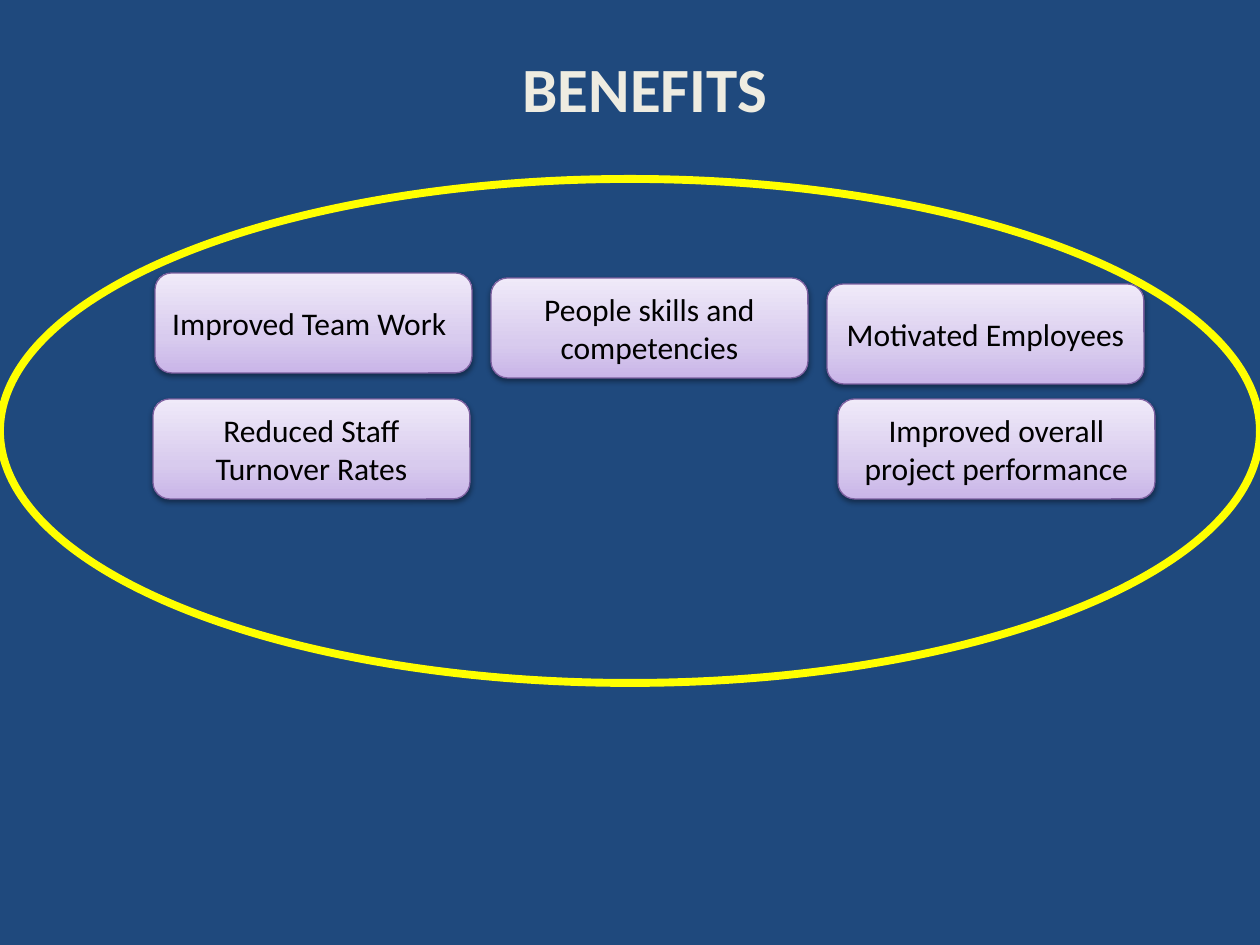
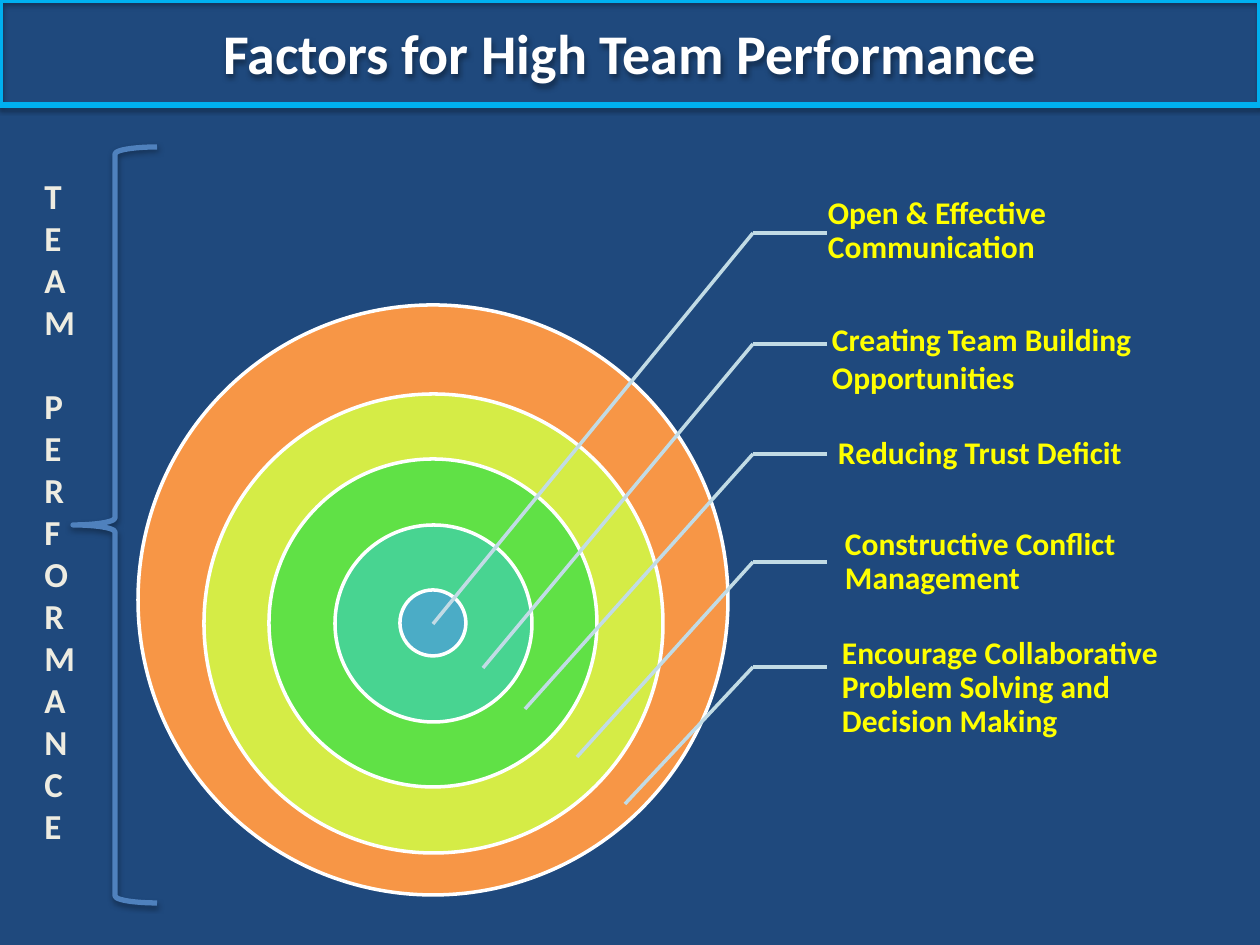
from copy import deepcopy
from dataclasses import dataclass

from lxml import etree
from pptx import Presentation
from pptx.dml.color import RGBColor
from pptx.enum.shapes import MSO_CONNECTOR, MSO_SHAPE
from pptx.enum.text import MSO_ANCHOR, MSO_AUTO_SIZE, PP_ALIGN
from pptx.oxml.ns import qn
from pptx.util import Emu, Pt

LEFT, CENTER = PP_ALIGN.LEFT, PP_ALIGN.CENTER
TOP, MIDDLE = MSO_ANCHOR.TOP, MSO_ANCHOR.MIDDLE
NO_AUTOFIT = MSO_AUTO_SIZE.NONE
OVAL, CARD, BRACE = MSO_SHAPE.OVAL, MSO_SHAPE.ROUNDED_RECTANGLE, MSO_SHAPE.LEFT_BRACE
STRAIGHT = MSO_CONNECTOR.STRAIGHT

EMU_PER_PX = 914400 // 126
SLIDE_SIZE = (1260, 945)
TITLE_ONLY_LAYOUT = 5


@dataclass(frozen=True)
class Theme:
    font: str = "Calibri"
    background: str = "1F497D"
    cream: str = "EEECE1"
    white: str = "FFFFFF"
    black: str = "000000"
    yellow: str = "FFFF00"
    banner_line: str = "00B0F0"
    card_line: str = "7D60A0"
    card_stops: tuple = ((0, "C9B5E8"), (0.35, "D8CBEE"), (1, "F0EAF9"))
    rings: tuple = ("F79646", "D5EC46", "60E146", "48D491", "4BACC6")
    leader: str = "C1DBE5"
    brace: str = "4F81BD"
    benefits_title: int = 36
    factors_title: int = 32
    side_label: int = 20
    body: int = 18


THEME = Theme()

BENEFITS_TITLE = "BENEFITS"
BENEFITS_TITLE_BOX = (310, 43, 670, 88)
BENEFITS_OVAL = (0, 179, 1260, 504)
CARD_SIZE = (317, 100)
BENEFITS = [  # text, left, top, alignment
    ("Improved Team Work", 155, 273, LEFT),
    ("People skills and competencies", 491, 278, CENTER),
    ("Motivated Employees", 827, 284, CENTER),
    ("Reduced Staff Turnover Rates", 153, 399, CENTER),
    ("Improved overall project performance", 838, 399, CENTER),
]

FACTORS_TITLE = "Factors for High Team Performance"
FACTORS_BANNER = (0, 0, 1260, 105)
SIDE_LABEL = "TEAM PERFORMANCE"
SIDE_LABEL_BOX = (32, 168, 53, 692)
BRACE_BOX = (73, 147, 84, 756)
FACTORS = [  # text, text box, line spacing, leader height, leader tip
    ("Open & Effective Communication", (810, 179, 277, 105), 0.9, 233, (433, 624)),
    ("Creating Team Building Opportunities", (814, 305, 323, 106), 1.0, 344, (483, 668)),
    ("Reducing Trust Deficit", (820, 416, 324, 77), 0.9, 454, (525, 709)),
    ("Constructive Conflict Management", (827, 510, 295, 105), 0.9, 562, (577, 757)),
    ("Encourage Collaborative Problem Solving and Decision Making",
     (824, 640, 358, 97), 0.9, 667, (625, 804)),
]
LEADER_ELBOW, LEADER_END = 753, 827
FACTOR_MARGINS = (18, 4, 4, 4)
RING_CENTER_X, RING_CENTER_Y, OUTER_CENTER_Y = 433, 623, 600
CORE_DIAMETER, RING_STEP = 66, 131


def px(*lengths):
    return [Emu(length * EMU_PER_PX) for length in lengths]


def rgb(color):
    return RGBColor.from_string(color)


def set_line(shape, color, width):
    shape.line.color.rgb = rgb(color)
    shape.line.width = Pt(width)


def add_shadow(shape, opacity):
    """Give the shape a soft shadow that falls straight down."""
    shape.shadow.inherit = False
    effects = shape._element.spPr.find(qn("a:effectLst"))
    shadow = etree.SubElement(effects, qn("a:outerShdw"), blurRad="40000", dist="20000",
                              dir="5400000", rotWithShape="0")
    color = etree.SubElement(shadow, qn("a:srgbClr"), val=THEME.black)
    etree.SubElement(color, qn("a:alpha"), val=str(opacity * 1000))


def write(shape, text, size, color, bold=False, align=CENTER, anchor=MIDDLE, spacing=1.0):
    frame = shape.text_frame
    frame.text = text
    frame.word_wrap = True
    frame.auto_size = NO_AUTOFIT
    frame.vertical_anchor = anchor
    para = frame.paragraphs[0]
    para.alignment = align
    para.line_spacing = spacing
    font = para.runs[0].font
    font.name, font.size, font.bold = THEME.font, Pt(size), bold
    font.color.rgb = rgb(color)


def add_titled_slide(deck, title, box, size, color):
    slide = deck.slides.add_slide(deck.slide_layouts[TITLE_ONLY_LAYOUT])
    shape = slide.shapes.title
    shape.left, shape.top, shape.width, shape.height = px(*box)
    write(shape, title, size, color, bold=True)
    return slide


def add_outline(slide, kind, box, color, width, fill=None):
    shape = slide.shapes.add_shape(kind, *px(*box))
    shape.shadow.inherit = False
    if fill:
        shape.fill.solid()
        shape.fill.fore_color.rgb = rgb(fill)
    else:
        shape.fill.background()
    set_line(shape, color, width)
    return shape


def add_card(slide, text, left, top, align):
    card = slide.shapes.add_shape(CARD, *px(left, top, *CARD_SIZE))
    card.fill.gradient()
    stop_list = card._element.spPr.find(".//" + qn("a:gsLst"))
    stop_list.append(deepcopy(stop_list[-1]))
    for stop, (position, color) in zip(card.fill.gradient_stops, THEME.card_stops):
        stop.position = position
        stop.color.rgb = rgb(color)
    card.fill.gradient_angle = 90
    set_line(card, THEME.card_line, 0.75)
    add_shadow(card, 38)
    write(card, text, THEME.body, THEME.black, align=align)


def add_leader(slide, start, end):
    leader = slide.shapes.add_connector(STRAIGHT, *px(*start, *end))
    set_line(leader, THEME.leader, 2)
    etree.SubElement(leader._element.spPr, qn("a:effectLst"))


def add_rings(slide):
    """Stack the circles from the outermost to the core."""
    for index, color in enumerate(THEME.rings):
        diameter = CORE_DIAMETER + RING_STEP * (len(THEME.rings) - 1 - index)
        center_y = RING_CENTER_Y if index else OUTER_CENTER_Y
        radius = diameter // 2
        box = (RING_CENTER_X - radius, center_y - radius, diameter, diameter)
        add_outline(slide, OVAL, box, THEME.white, 2, fill=color)


def add_factor(slide, text, box, spacing, height, tip):
    label = slide.shapes.add_textbox(*px(*box))
    write(label, text, THEME.body, THEME.yellow, bold=True, align=LEFT, spacing=spacing)
    frame = label.text_frame
    (frame.margin_left, frame.margin_top,
     frame.margin_right, frame.margin_bottom) = px(*FACTOR_MARGINS)
    elbow = (LEADER_ELBOW, height)
    add_leader(slide, elbow, (LEADER_END, height))
    add_leader(slide, elbow, tip)


def build_benefits(deck):
    slide = add_titled_slide(deck, BENEFITS_TITLE, BENEFITS_TITLE_BOX,
                             THEME.benefits_title, THEME.cream)
    for benefit in BENEFITS:
        add_card(slide, *benefit)
    add_outline(slide, OVAL, BENEFITS_OVAL, THEME.yellow, 4.5)


def build_factors(deck):
    slide = add_titled_slide(deck, FACTORS_TITLE, FACTORS_BANNER,
                             THEME.factors_title, THEME.white)
    banner = slide.shapes.title
    set_line(banner, THEME.banner_line, 3)
    add_shadow(banner, 38)
    add_rings(slide)
    for factor in FACTORS:
        add_factor(slide, *factor)
    brace = add_outline(slide, BRACE, BRACE_BOX, THEME.brace, 3)
    add_shadow(brace, 35)
    side_label = slide.shapes.add_textbox(*px(*SIDE_LABEL_BOX))
    write(side_label, SIDE_LABEL, THEME.side_label, THEME.cream, bold=True,
          align=LEFT, anchor=TOP)


def main():
    deck = Presentation()
    deck.slide_width, deck.slide_height = px(*SLIDE_SIZE)
    background = deck.slide_master.background.fill
    background.solid()
    background.fore_color.rgb = rgb(THEME.background)
    build_benefits(deck)
    build_factors(deck)
    deck.save("out.pptx")


if __name__ == "__main__":
    main()
